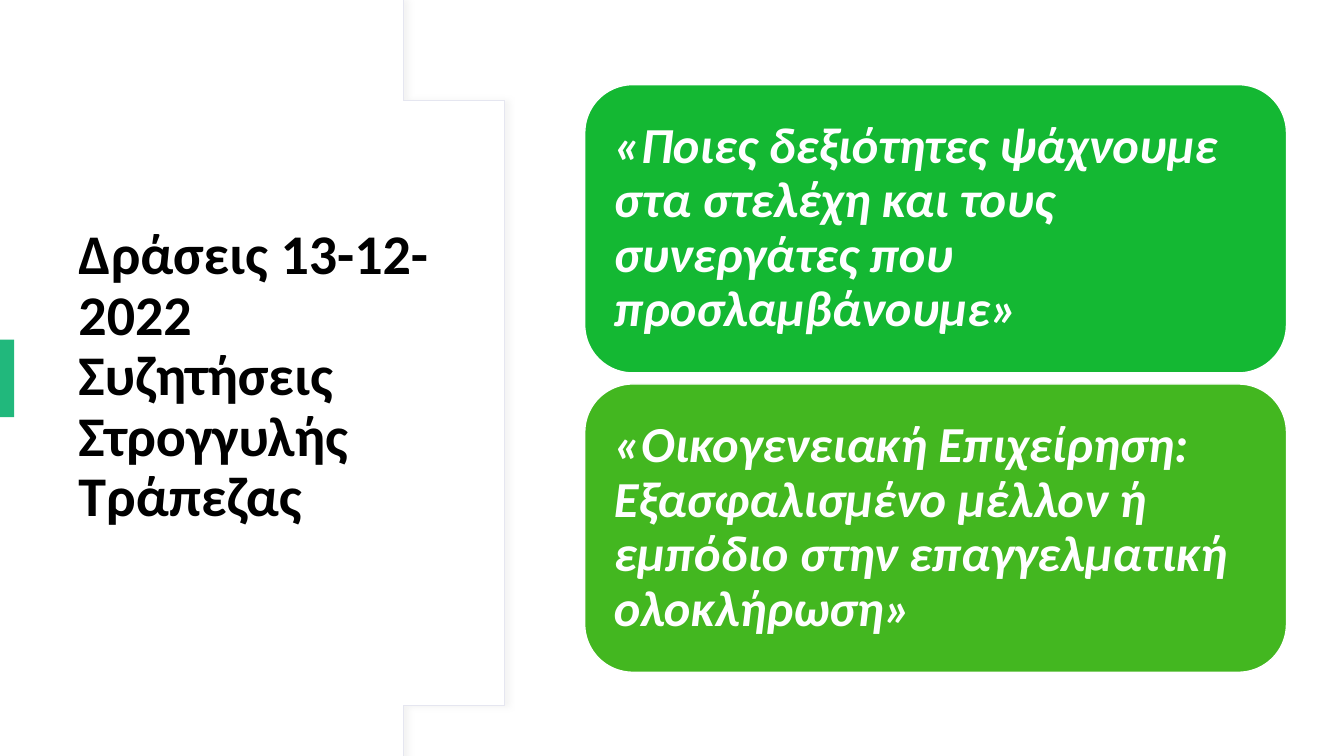
import pptx
import pptx.dml.color
import pptx.enum.shapes
import pptx.enum.text
import pptx.oxml
import pptx.util
from pptx.oxml.ns import nsdecls

WIDTH, HEIGHT = 13.33, 7.5
CURVE_STEPS = 32
# Upper half of the panel's edge, as shares of the panel's width and height
EDGE_CURVE = [(0.76, 0.01), (0.91, 0.14), (1, 0.31), (1, 0.5)]
EDGE_START = (0.748, 0)
TITLE = "Δράσεις 13-12-2022\vΣυζητήσεις Στρογγυλής Τράπεζας"
TOPICS = [
    ("«Ποιες δεξιότητες ψάχνουμε στα στελέχη και τους συνεργάτες που προσλαμβάνουμε»", "14B833"),
    ("«Οικογενειακή Επιχείρηση: Εξασφαλισμένο μέλλον ή εμπόδιο στην επαγγελματική ολοκλήρωση»", "43B720"),
]
SHADOW = (
    f'<a:effectLst {nsdecls("a")}><a:outerShdw blurRad="50800" dist="38100" dir="0">'
    '<a:srgbClr val="D9D9D9"><a:alpha val="30000"/></a:srgbClr></a:outerShdw></a:effectLst>'
)


def color(hex_string):
    return pptx.dml.color.RGBColor.from_string(hex_string)


def inches(*lengths):
    return [pptx.util.Inches(length) for length in lengths]


def paint(shape, fill, line=None, line_width=1):
    shape.shadow.inherit = False
    shape.fill.solid()
    shape.fill.fore_color.rgb = color(fill)
    if line:
        shape.line.color.rgb = color(line)
        shape.line.width = pptx.util.Pt(line_width)
    else:
        shape.line.fill.background()


def write(shape, text, font_color, inset_x, inset_y, **font_values):
    frame = shape.text_frame
    frame_values = {
        "word_wrap": True,
        "vertical_anchor": pptx.enum.text.MSO_ANCHOR.MIDDLE,
        "margin_left": pptx.util.Inches(inset_x),
        "margin_right": pptx.util.Inches(inset_x),
        "margin_top": pptx.util.Inches(inset_y),
        "margin_bottom": pptx.util.Inches(inset_y),
    }
    for name, value in frame_values.items():
        setattr(frame, name, value)
    paragraph = frame.paragraphs[0]
    paragraph.text = text
    paragraph.alignment = pptx.enum.text.PP_ALIGN.LEFT
    paragraph.line_spacing = 0.9
    for run in paragraph.runs:
        for name, value in {"name": "Calibri", "bold": True, **font_values}.items():
            setattr(run.font, name, value)
        run.font.color.rgb = color(font_color)


def curve_point(share):
    """Point of the cubic EDGE_CURVE at a share of its length."""
    rest = 1 - share
    weights = (rest**3, 3 * rest**2 * share, 3 * rest * share**2, share**3)
    return tuple(sum(w * point[axis] for w, point in zip(weights, EDGE_CURVE)) for axis in (0, 1))


def add_curved_panel(slide, left, top, width, height):
    upper = [EDGE_START] + [curve_point(step / CURVE_STEPS) for step in range(CURVE_STEPS + 1)]
    lower = [(x, 1 - y) for x, y in reversed(upper[:-1])]
    outline = [(left + x * width, top + y * height) for x, y in upper + lower + [(0, 1)]]
    builder = slide.shapes.build_freeform(left, top, scale=pptx.util.Inches(1))
    builder.add_line_segments(outline, close=True)
    panel = builder.convert_to_shape()
    paint(panel, "FFFFFF", "E5E6F0", 0.75)
    properties = panel._element.spPr
    properties.replace(properties.find(pptx.oxml.ns.qn("a:effectLst")), pptx.oxml.parse_xml(SHADOW))


def add_title(slide, left, top, width, height):
    title = slide.shapes.add_textbox(*inches(left, top, width, height))
    write(title, TITLE, "000000", 0.1, 0.05, size=pptx.util.Pt(40))


def add_accent(slide, left, top, width, height):
    accent = slide.shapes.add_shape(
        pptx.enum.shapes.MSO_SHAPE.RECTANGLE, *inches(left, top, width, height))
    paint(accent, "21B87C")


def add_topics(slide, left, top, width, height, gap=0.11):
    card_height = (height - gap * (len(TOPICS) - 1)) / len(TOPICS)
    for row, (text, fill) in enumerate(TOPICS):
        card = slide.shapes.add_shape(
            pptx.enum.shapes.MSO_SHAPE.ROUNDED_RECTANGLE,
            *inches(left, top + row * (card_height + gap), width, card_height))
        paint(card, fill, "FFFFFF")
        write(card, text, "FFFFFF", 0.15, 0.15, size=pptx.util.Pt(36), italic=True)


def main():
    presentation = pptx.Presentation()
    presentation.slide_width, presentation.slide_height = inches(WIDTH, HEIGHT)
    slide = presentation.slides.add_slide(presentation.slide_layouts[6])
    add_curved_panel(slide, 0, 0, 5.27, HEIGHT)
    add_title(slide, 0.68, 1.27, 3.94, 4.95)
    add_accent(slide, 0, 3.37, 0.14, 0.77)
    add_topics(slide, 5.8, 0.84, 6.96, 5.83)
    presentation.save("out.pptx")


if __name__ == "__main__":
    main()
